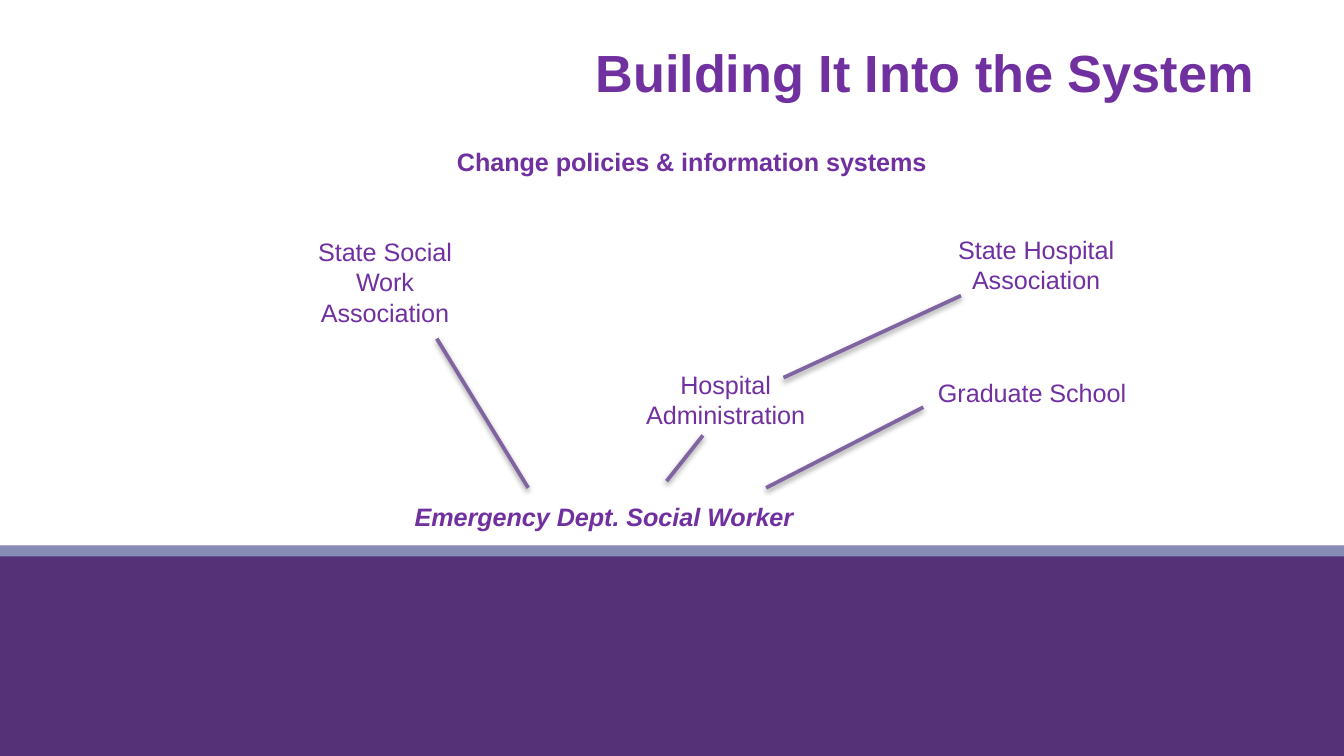
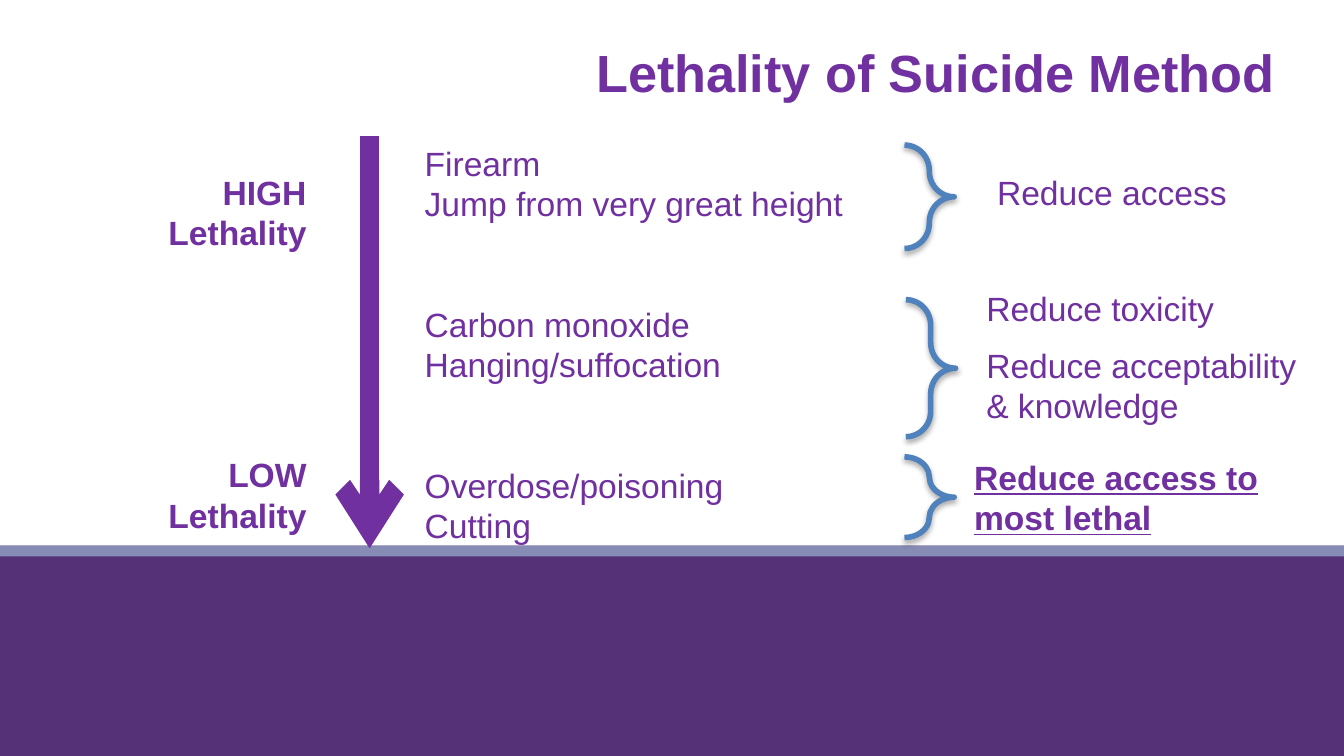
from dataclasses import dataclass

from lxml import etree
from pptx import Presentation
from pptx.dml.color import RGBColor as RGB
from pptx.enum.shapes import MSO_CONNECTOR as CONN, MSO_SHAPE as SHAPE
from pptx.enum.text import MSO_ANCHOR as ANCHOR, MSO_AUTO_SIZE as FIT, PP_ALIGN as ALIGN
from pptx.oxml.ns import qn
from pptx.util import Inches, Pt


@dataclass(frozen=True)
class Theme:
    font: str = "Arial"
    text: RGB = RGB.from_string("7030A0")
    band: RGB = RGB.from_string("553278")
    stripe: RGB = RGB.from_string("878CB4")
    link: RGB = RGB.from_string("8064A2")
    brace: RGB = RGB.from_string("4F81BD")
    title_size: float = 28
    list_size: float = 18
    label_size: float = 13.5


T = Theme()


def write_text(sp, at, paras, size, align=ALIGN.LEFT, inset=(0.1, 0.05), **style):
    """Place sp and fill it; paras holds (text, points of space before) pairs."""
    sp.left, sp.top, sp.width, sp.height = map(Inches, at)
    tf = sp.text_frame
    tf.word_wrap = True
    tf.auto_size = FIT.NONE
    tf.vertical_anchor = ANCHOR.TOP
    tf.margin_left = tf.margin_right = Inches(inset[0])
    tf.margin_top = tf.margin_bottom = Inches(inset[1])
    for i, (text, gap) in enumerate(paras):
        p = tf.add_paragraph() if i else tf.paragraphs[0]
        if sp.is_placeholder:
            pPr = p._p.get_or_add_pPr()
            pPr.set("marL", "0")
            pPr.set("indent", "0")
            etree.SubElement(pPr, qn("a:buNone"))
        p.alignment = align
        p.space_before = Pt(gap)
        r = p.add_run()
        r.text = text
        for name, value in {"name": T.font, "size": Pt(size), **style}.items():
            setattr(r.font, name, value)
        r.font.color.rgb = T.text


def set_line(sp, color, width, shadow=None):
    """Set the outline; shadow is a (distance in points, opacity) pair or None."""
    sp.line.color.rgb = color
    sp.line.width = Pt(width)
    effects = etree.SubElement(sp.element.spPr, qn("a:effectLst"))
    if shadow:
        dist, opacity = shadow
        outer = etree.SubElement(effects, qn("a:outerShdw"), blurRad=str(Pt(3.1)),
                                 dist=str(Pt(dist)), dir="5400000", rotWithShape="0")
        black = etree.SubElement(outer, qn("a:srgbClr"), val="000000")
        etree.SubElement(black, qn("a:alpha"), val=str(opacity * 1000))


prs = Presentation()
prs.slide_width, prs.slide_height = Inches(10), Inches(10 * 9 / 16)
title_only, title_and_list = prs.slide_layouts[5], prs.slide_layouts[1]

# Slide 1: who the social worker's hospital system connects to
s = prs.slides.add_slide(title_only)

# The bottom bands belong to the master, behind its placeholders
master_tree = prs.slide_master.shapes.element
for i, (height, color) in enumerate([(1.62, T.band), (0.08, T.stripe)]):
    sp = s.shapes.add_shape(SHAPE.RECTANGLE, 0, Inches(4.06), Inches(10), Inches(height))
    sp.shadow.inherit = False
    sp.fill.solid()
    sp.fill.fore_color.rgb = color
    sp.line.fill.background()
    master_tree.insert(2 + i, sp.element)

write_text(s.shapes.title, (3.93, 0.25, 5.9, 0.63), [("Building It Into the System", 0)],
           T.title_size, ALIGN.CENTER, bold=True)

links = [
    (3.25, 2.52, 3.93, 3.63),
    (5.23, 3.24, 4.96, 3.58),
    (7.15, 2.2, 5.83, 2.81),
    (6.87, 3.03, 5.7, 3.63),
]
for ends in links:
    link = s.shapes.add_connector(CONN.STRAIGHT, *map(Inches, ends))
    set_line(link, T.link, 2, shadow=(1.6, 38))

labels = [
    ("Change policies & information systems", (3.33, 1.05, 4.15, 0.3), ALIGN.LEFT, {"bold": True}),
    ("State Social Work Association", (2.11, 1.72, 1.51, 0.76), ALIGN.CENTER, {}),
    ("State Hospital Association", (6.83, 1.7, 1.76, 0.53), ALIGN.CENTER, {}),
    ("Hospital Administration", (4.53, 2.71, 1.74, 0.53), ALIGN.CENTER, {}),
    ("Graduate School", (6.81, 2.77, 1.74, 0.3), ALIGN.CENTER, {}),
    ("Emergency Dept. Social Worker", (2.83, 3.69, 3.33, 0.3), ALIGN.CENTER,
     {"bold": True, "italic": True}),
]
for text, at, align, style in labels:
    write_text(s.shapes.add_textbox(0, 0, 0, 0), at, [(text, 0)], T.label_size, align,
               inset=(0.07, 0.04), **style)

# Slide 2: methods from high to low lethality, with the response to each group
s = prs.slides.add_slide(title_and_list)
write_text(s.shapes.title, (4.17, 0.25, 5.58, 0.56), [("Lethality of Suicide Method", 0)],
           T.title_size, ALIGN.CENTER, bold=True)

line_pitch = 1.2 * T.list_size
scale = [("HIGH", 0), ("Lethality", 0), ("LOW", 5 * line_pitch), ("Lethality", 0)]
write_text(s.shapes.add_textbox(0, 0, 0, 0), (1, 1.23, 1.38, 2.83), scale,
           T.list_size, ALIGN.RIGHT, bold=True)

methods = [
    ("Firearm", 0),
    ("Jump from very great height", 0),
    ("Carbon monoxide", 2 * line_pitch),
    ("Hanging/suffocation", 0),
    ("Overdose/poisoning", 2 * line_pitch),
    ("Cutting", 0),
]
write_text(s.placeholders[1], (3.06, 1.01, 3.53, 3.07), methods, T.list_size)

arrow = s.shapes.add_connector(CONN.STRAIGHT, Inches(2.75), Inches(1.01),
                               Inches(2.75), Inches(4.08))
set_line(arrow, T.text, 10.5)
etree.SubElement(arrow.element.spPr.find(qn("a:ln")), qn("a:tailEnd"), type="arrow")

responses = [
    ((6.73, 1.08, 0.37, 0.77), (7.32, 1.23, 2.22, 0.4), [("Reduce access", 0)], {}),
    ((6.74, 2.23, 0.37, 1.02), (7.24, 2.09, 2.59, 1.16),
     [("Reduce toxicity", 0), ("Reduce acceptability & knowledge", T.list_size / 2)], {}),
    ((6.73, 3.4, 0.37, 0.6), (7.15, 3.35, 2.6, 0.71),
     [("Reduce access to most lethal", 0)], {"bold": True, "underline": True}),
]
for brace_at, text_at, paras, style in responses:
    brace = s.shapes.add_shape(SHAPE.RIGHT_BRACE, *map(Inches, brace_at))
    brace.adjustments[0] = 0.51
    brace.fill.background()
    set_line(brace, T.brace, 3, shadow=(1.8, 35))
    write_text(s.shapes.add_textbox(0, 0, 0, 0), text_at, paras, T.list_size, **style)

prs.save("out.pptx")
